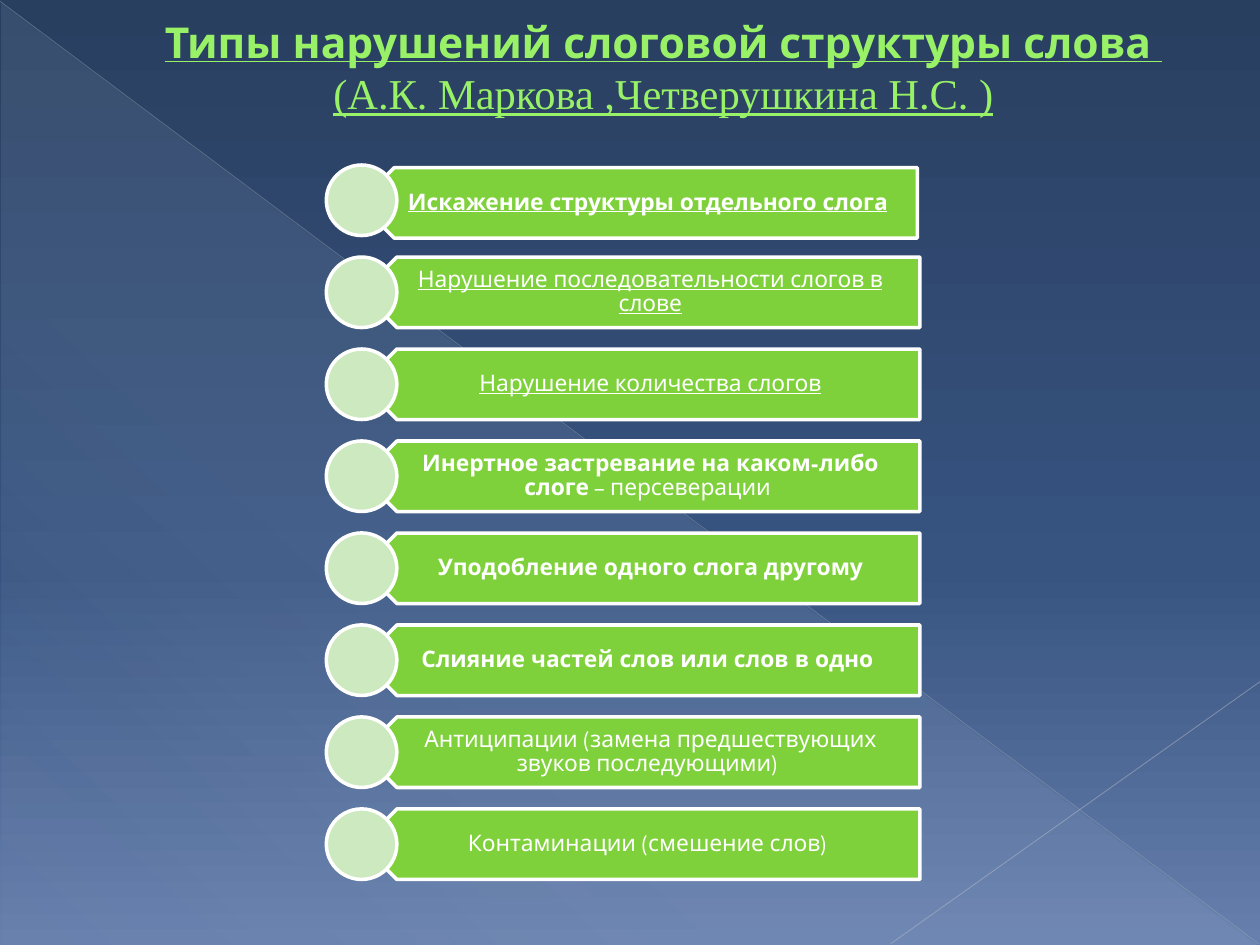
from dataclasses import dataclass

from lxml import etree
from pptx import Presentation
from pptx.dml.color import RGBColor
from pptx.enum import shapes, text
from pptx.oxml import ns
from pptx.util import Inches, Pt


@dataclass(frozen=True)
class Theme:
    font: str = "League Spartan"
    authors_font: str = "Times New Roman"
    title_size: float = 24.3
    label_size: float = 13
    title: str = "98F167"
    plate: str = "7FD13B"
    circle: str = "CCE9BF"
    white: str = "FFFFFF"
    glow: str = "D6ECFF"


@dataclass(frozen=True)
class Stop:
    position: int
    color: str
    opacity: int = 100


@dataclass(frozen=True)
class Ray:
    start: tuple[float, float]
    end: tuple[float, float]
    color: str
    width: float
    opacity: int


@dataclass(frozen=True)
class Row:
    strong: str = ""
    plain: str = ""
    underline: bool = False
    left: float = 2.87
    rise: float = 0


THEME = Theme()
BACKGROUND = [Stop(0, "293F60"), Stop(60, "375380"), Stop(100, "667FAC")]
GLOW = [Stop(0, THEME.glow, 10), Stop(70, THEME.glow, 8), Stop(100, THEME.glow, 1)]
RAYS = [
    Ray((0, 0.01), (9.99, 7.49), "B7BCC5", 0.39, 35),
    Ray((10, 5.41), (7.07, 7.49), "BFC3CB", 0.47, 45),
]
ROWS = [
    Row("Искажение структуры отдельного слога", underline=True, left=2.85, rise=0.02),
    Row(plain="Нарушение последовательности слогов в слове", underline=True),
    Row(plain="Нарушение количества слогов", underline=True),
    Row("Инертное застревание на каком-либо слоге", " – персеверации "),
    Row("Уподобление одного слога другому"),
    Row("Слияние частей слов или слов в одно "),
    Row(plain="Антиципации (замена предшествующих звуков последующими) "),
    Row(plain="Контаминации (смешение слов) "),
]
FIRST_TOP, ROW_STEP = 1.31, 0.73
PLATE_WIDTH, ROW_HEIGHT, CIRCLE_LEFT = 4.43, 0.56, 2.59


def rgb(color: str) -> RGBColor:
    return RGBColor.from_string(color)


def set_opacity(color_element, percent: int) -> None:
    etree.SubElement(color_element, ns.qn("a:alpha"), val=str(percent * 1000))


def set_gradient(fill, owner, stops: list[Stop], angle: int) -> None:
    """Fill with the given stops; the angle runs clockwise in degrees."""
    fill.gradient()
    gradient = owner.find(".//" + ns.qn("a:gradFill"))
    stop_list = gradient.find(ns.qn("a:gsLst"))
    for old_stop in list(stop_list):
        stop_list.remove(old_stop)
    for stop in stops:
        element = etree.SubElement(stop_list, ns.qn("a:gs"), pos=str(stop.position * 1000))
        color = etree.SubElement(element, ns.qn("a:srgbClr"), val=stop.color)
        if stop.opacity < 100:
            set_opacity(color, stop.opacity)
    gradient.find(ns.qn("a:lin")).set("ang", str(angle * 60000))


def add_ray(slide, ray: Ray) -> None:
    connector = slide.shapes.add_connector(
        shapes.MSO_CONNECTOR.STRAIGHT, *map(Inches, ray.start + ray.end))
    connector.line.width = Pt(ray.width)
    connector.line.color.rgb = rgb(ray.color)
    properties = connector.element.spPr
    set_opacity(properties.find(".//" + ns.qn("a:srgbClr")), ray.opacity)
    etree.SubElement(properties, ns.qn("a:effectLst"))


def add_outlined(slide, kind, left: float, top: float, width: float, color: str):
    shape = slide.shapes.add_shape(kind, *map(Inches, (left, top, width, ROW_HEIGHT)))
    shape.shadow.inherit = False
    shape.fill.solid()
    shape.fill.fore_color.rgb = rgb(color)
    shape.line.color.rgb = rgb(THEME.white)
    shape.line.width = Pt(2)
    return shape


def add_frame(slide, box, insets):
    """Add a wrapping, vertically centred text box and return its text frame."""
    frame = slide.shapes.add_textbox(*map(Inches, box)).text_frame
    frame.word_wrap = True
    frame.vertical_anchor = text.MSO_ANCHOR.MIDDLE
    (frame.margin_left, frame.margin_top,
     frame.margin_right, frame.margin_bottom) = map(Inches, insets)
    frame.paragraphs[0].alignment = text.PP_ALIGN.CENTER
    return frame


def style_paragraph(paragraph, size: float, color: str, underline: bool) -> None:
    paragraph.font.size = Pt(size)
    paragraph.font.color.rgb = rgb(color)
    paragraph.font.underline = underline


def add_run(paragraph, words: str, font: str, bold: bool = False) -> None:
    run = paragraph.add_run()
    run.text = words
    run.font.name = font
    run.font.bold = bold


def add_title(slide) -> None:
    frame = add_frame(slide, (0.5, 0.29, 9, 1.09), (0.63, 0.05, 0.1, 0.65))
    paragraph = frame.paragraphs[0]
    style_paragraph(paragraph, THEME.title_size, THEME.title, True)
    add_run(paragraph, "Типы нарушений слоговой структуры слова", THEME.font, True)
    add_run(paragraph, " ", THEME.font)
    paragraph.add_line_break()
    add_run(paragraph, "(А.К. Маркова ,Четверушкина Н.С. )", THEME.authors_font)


def add_row(slide, row: Row, top: float) -> None:
    plate_top = top + row.rise
    plate = add_outlined(slide, shapes.MSO_SHAPE.PENTAGON, row.left, plate_top,
                         PLATE_WIDTH, THEME.plate)
    plate.rotation = 180
    frame = add_frame(slide, (row.left, plate_top, PLATE_WIDTH, ROW_HEIGHT),
                      (0.25, 0.05, 0.1, 0.05))
    paragraph = frame.paragraphs[0]
    paragraph.line_spacing = 0.9
    style_paragraph(paragraph, THEME.label_size, THEME.white, row.underline)
    for words, bold in ((row.strong, True), (row.plain, False)):
        if words:
            add_run(paragraph, words, THEME.font, bold)
    add_outlined(slide, shapes.MSO_SHAPE.OVAL, CIRCLE_LEFT, top, ROW_HEIGHT, THEME.circle)


def main() -> None:
    presentation = Presentation()
    presentation.slide_width, presentation.slide_height = Inches(10), Inches(7.5)
    slide = presentation.slides.add_slide(presentation.slide_layouts[6])
    set_gradient(slide.background.fill, slide.element, BACKGROUND, 90)

    glow = slide.shapes.add_shape(shapes.MSO_SHAPE.RIGHT_TRIANGLE,
                                  *map(Inches, (0.01, 0.02, 9.98, 7.48)))
    glow.shadow.inherit = False
    glow.line.fill.background()
    set_gradient(glow.fill, glow.element, GLOW, 133)
    for ray in RAYS:
        add_ray(slide, ray)

    add_title(slide)
    for index, row in enumerate(ROWS):
        add_row(slide, row, FIRST_TOP + index * ROW_STEP)
    presentation.save("out.pptx")


if __name__ == "__main__":
    main()
